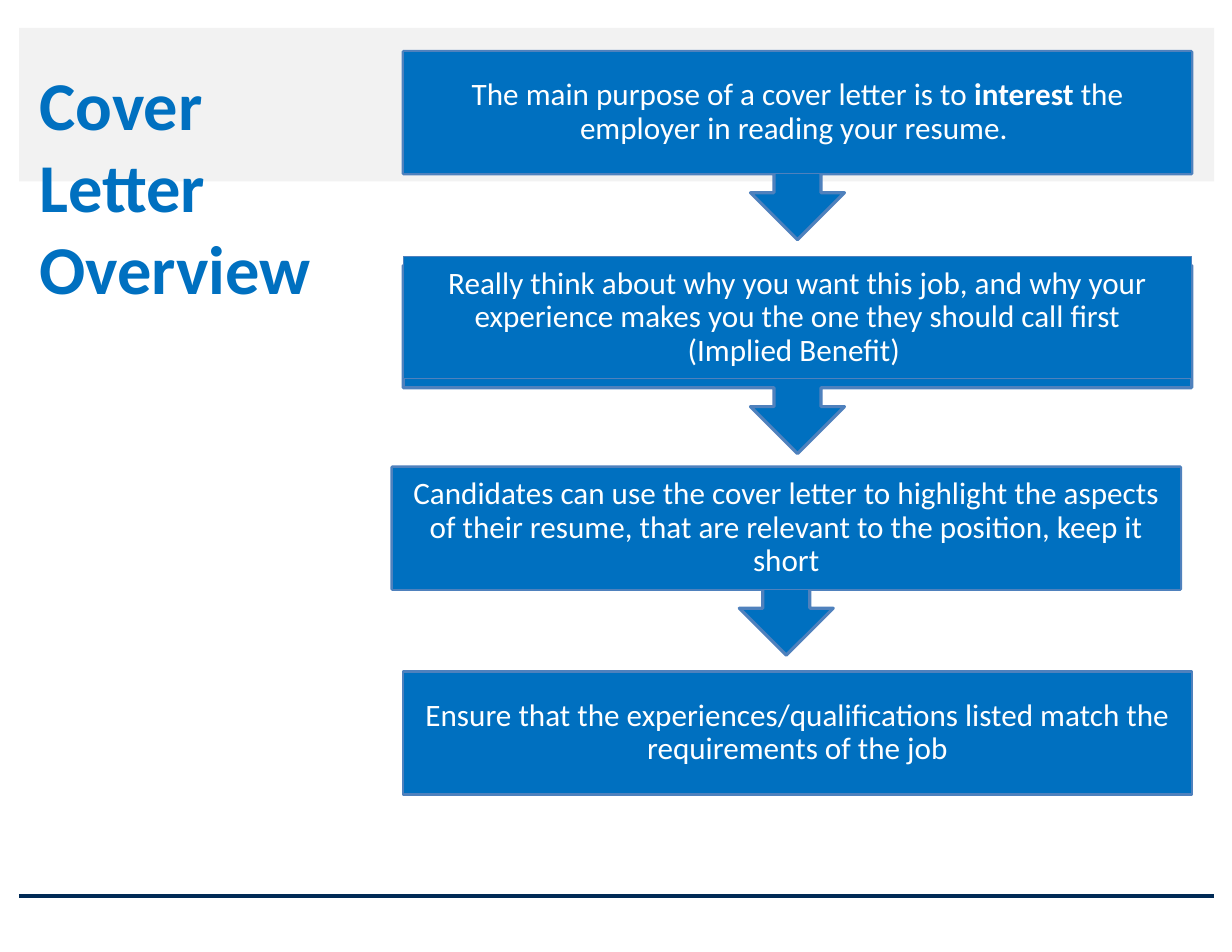
from lxml.etree import SubElement
from pptx import Presentation
from pptx.dml.color import RGBColor
from pptx.enum.shapes import MSO_CONNECTOR, MSO_SHAPE
from pptx.enum.text import MSO_ANCHOR, MSO_AUTO_SIZE, PP_ALIGN
from pptx.oxml.ns import qn
from pptx.util import Inches, Pt

BLUE = RGBColor(0x00, 0x70, 0xC0)
EDGE = RGBColor(0x4F, 0x81, 0xBD)
NAVY = RGBColor(0x00, 0x2A, 0x55)
GREY = RGBColor(0xF2, 0xF2, 0xF2)
WHITE = RGBColor(0xFF, 0xFF, 0xFF)

TITLE = "Cover Letter Overview"
# Each step: left, top of the backing shape, top of the text panel, (text, bold) runs
STEPS = [
    (3.6, 0.46, 0.46, [("The main purpose of a cover letter is to ", False),
                       ("interest", True),
                       (" the employer in reading your resume. ", False)]),
    (3.6, 2.37, 2.29, [("Really think about why you want this job, and why your "
                        "experience makes you the one they should call first "
                        "(Implied Benefit) ", False)]),
    (3.5, 4.17, 4.17, [("Candidates can use the cover letter to highlight the "
                        "aspects of their resume, that are relevant to the "
                        "position, keep it short", False)]),
    (3.6, 6.0, 6.0, [("Ensure that the experiences/qualifications listed match "
                      "the requirements of the job", False)]),
]
STEP_WIDTH, PANEL_HEIGHT, CALLOUT_HEIGHT = 7.04, 1.09, 1.68
MARGIN, BAND_WIDTH = 0.17, 10.67


def add_block(slide, preset, left, top, width, height, fill, edge_width=0):
    block = slide.shapes.add_shape(
        preset, Inches(left), Inches(top), Inches(width), Inches(height))
    block.shadow.inherit = False
    block.fill.solid()
    block.fill.fore_color.rgb = fill
    if edge_width:
        block.line.color.rgb = EDGE
        block.line.width = Pt(edge_width)
    else:
        block.line.fill.background()
    return block


def write(shape, runs, *, size, color, align, anchor, inset=None,
          line_spacing=1.0, space_after=0):
    frame = shape.text_frame
    frame.word_wrap = True
    frame.auto_size = MSO_AUTO_SIZE.NONE
    frame.vertical_anchor = anchor
    if inset is not None:
        frame.margin_left = frame.margin_right = Inches(inset)
        frame.margin_top = frame.margin_bottom = Inches(inset)
    paragraph = frame.paragraphs[0]
    paragraph.alignment = align
    paragraph.line_spacing = line_spacing
    paragraph.space_after = Pt(space_after)
    for text, bold in runs:
        run = paragraph.add_run()
        run.text = text
        run.font.name = "Calibri"
        run.font.size = Pt(size)
        run.font.bold = bold
        run.font.color.rgb = color


def add_step(slide, left, back_top, panel_top, runs, is_last):
    if is_last:
        add_block(slide, MSO_SHAPE.RECTANGLE, left, back_top,
                  STEP_WIDTH, PANEL_HEIGHT, BLUE, 2)
    else:
        callout = add_block(slide, MSO_SHAPE.UP_ARROW_CALLOUT, left, back_top,
                            STEP_WIDTH, CALLOUT_HEIGHT, BLUE, 2)
        callout.rotation = 180
    panel = add_block(slide, MSO_SHAPE.RECTANGLE, left, panel_top,
                      STEP_WIDTH, PANEL_HEIGHT, BLUE, 0.75)
    write(panel, runs, size=20, color=WHITE, align=PP_ALIGN.CENTER,
          anchor=MSO_ANCHOR.MIDDLE, inset=0.16, line_spacing=0.9, space_after=7)


def main():
    prs = Presentation()
    prs.slide_width, prs.slide_height = Inches(11), Inches(8.5)
    slide = prs.slides.add_slide(prs.slide_layouts[5])

    band = add_block(slide, MSO_SHAPE.RECTANGLE, MARGIN, 0.25, BAND_WIDTH, 1.37, GREY)
    footer = slide.shapes.add_connector(
        MSO_CONNECTOR.STRAIGHT, Inches(MARGIN), Inches(8),
        Inches(MARGIN + BAND_WIDTH), Inches(8))
    footer.line.color.rgb = NAVY
    footer.line.width = Pt(2.13)
    SubElement(footer._element.spPr, qn("a:effectLst"))

    title = slide.shapes.title
    title.left, title.top = Inches(0.25), Inches(0.5)
    title.width, title.height = Inches(3), Inches(3.5)
    write(title, [(TITLE, True)], size=44, color=BLUE, align=PP_ALIGN.LEFT,
          anchor=MSO_ANCHOR.TOP, space_after=6)
    title._element.addprevious(band._element)  # the band lies behind the title

    for number, step in enumerate(STEPS, start=1):
        add_step(slide, *step, is_last=number == len(STEPS))

    prs.save("out.pptx")


if __name__ == "__main__":
    main()
